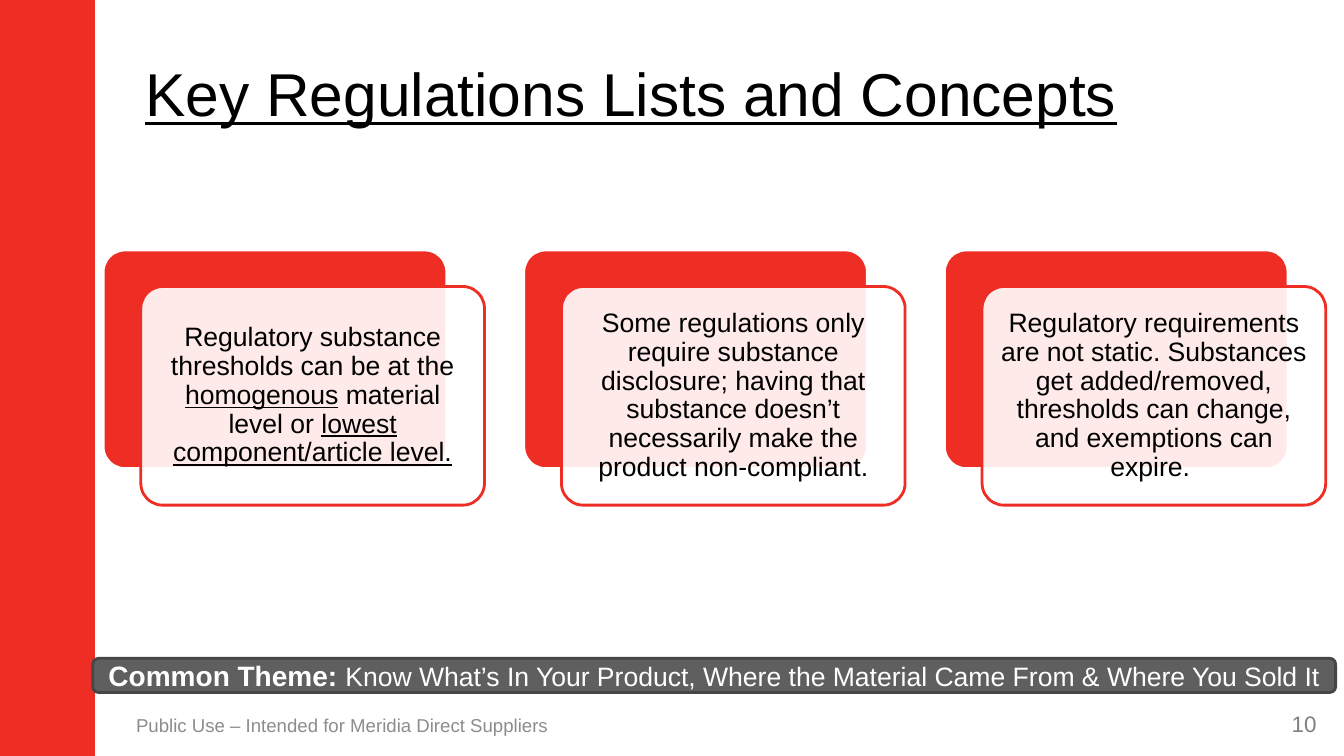
from lxml.etree import SubElement
from pptx import Presentation
from pptx.dml.color import RGBColor
from pptx.enum.shapes import MSO_SHAPE as Preset
from pptx.enum.text import MSO_ANCHOR as Anchor, MSO_AUTO_SIZE as AutoSize, PP_ALIGN as Align
from pptx.oxml.ns import qn
from pptx.util import Cm, Pt

RED, WHITE, BLACK = "EE2E24", "FFFFFF", "000000"

CARDS = [
    [("Regulatory substance thresholds can be at the ", {}),
     ("homogenous", {"underline": True}),
     (" material level or ", {}),
     ("lowest component/article level.", {"underline": True})],
    [("Some regulations only require substance disclosure; having that substance "
      "doesn’t necessarily make the product non-compliant.", {})],
    [("Regulatory requirements are not static. Substances get added/removed, "
      "thresholds can change, and exemptions can expire. ", {})],
]


def color(hex_text):
    return RGBColor.from_string(hex_text)


def write(shape, spans, size, ink=BLACK, align=Align.LEFT, anchor=Anchor.MIDDLE,
          spacing=1.0, margins=(0.25, 0.13, 0.25, 0.13)):
    """Fill a shape with one paragraph; spans are (text, format) pairs, margins in cm."""
    frame = shape.text_frame
    frame.word_wrap = True
    frame.auto_size = AutoSize.NONE
    frame.vertical_anchor = anchor
    (frame.margin_left, frame.margin_top,
     frame.margin_right, frame.margin_bottom) = map(Cm, margins)
    para = frame.paragraphs[0]
    para.alignment = align
    para.line_spacing = spacing
    for text, style in spans:
        span = para.add_run()
        span.text = text
        font = span.font
        font.name = "Arial"
        font.size = Pt(style.get("size", size))
        font.bold = style.get("bold", False)
        font.underline = style.get("underline", False)
        font.color.rgb = color(ink)


def add_panel(slide, preset, box, fill, line=None, radius=None, opacity=None):
    """Draw a flat preset shape in a (left, top, width, height) box in cm."""
    panel = slide.shapes.add_shape(preset, *map(Cm, box))
    panel.shadow.inherit = False
    panel.fill.solid()
    panel.fill.fore_color.rgb = color(fill)
    if radius is not None:
        panel.adjustments[0] = radius
    if opacity is not None:
        solid = panel.fill._xPr.find(qn("a:solidFill"))
        SubElement(solid[0], qn("a:alpha"), val=str(opacity * 1000))
    if line:
        panel.line.color.rgb = color(line)
        panel.line.width = Pt(2)
    else:
        panel.line.fill.background()
    return panel


def add_title(slide, box, text):
    title = slide.shapes.title
    title.left, title.top, title.width, title.height = map(Cm, box)
    write(title, [(text, {"underline": True})], 43.2, anchor=Anchor.TOP,
          spacing=0.95, margins=(0, 0, 0, 0))


def add_card(slide, box, spans):
    """Place a red back plate and, shifted down and right, a white text plate."""
    left, top, width, height = box
    shift_x, shift_y = 0.95, 0.92
    size = width - shift_x, height - shift_y
    add_panel(slide, Preset.ROUNDED_RECTANGLE, (left, top, *size), RED,
              line=WHITE, radius=0.1)
    front = add_panel(slide, Preset.ROUNDED_RECTANGLE,
                      (left + shift_x, top + shift_y, *size), WHITE,
                      line=RED, radius=0.1, opacity=90)
    write(front, spans, 19, align=Align.CENTER, spacing=0.9,
          margins=(0.2, 0.2, 0.2, 0.2))


def add_cards(slide, box):
    left, top, width, height = box
    card_width = 9.61
    step = (width - card_width) / (len(CARDS) - 1)
    for index, spans in enumerate(CARDS):
        add_card(slide, (left + index * step, top, card_width, height), spans)


def add_theme_bar(slide, box):
    bar = add_panel(slide, Preset.ROUNDED_RECTANGLE, box, "5F5F5F", line="464646")
    write(bar, [("Common Theme: ", {"size": 20, "bold": True}),
                ("Know What’s In Your Product, Where the Material Came From "
                 "& Where You Sold It", {})],
          19, ink=WHITE, align=Align.CENTER)


def add_footer(slide, box):
    left, top, width, height = box
    number_width = 2.06
    note = slide.shapes.add_textbox(Cm(left), Cm(top), Cm(11.43), Cm(height))
    write(note, [("Public Use – Intended for Meridia Direct Suppliers", {})], 13.3,
          ink="8C8C8C", anchor=Anchor.BOTTOM, margins=(0, 0.13, 0.25, 0.13))
    number = slide.shapes.add_textbox(Cm(left + width - number_width), Cm(top),
                                      Cm(number_width), Cm(height))
    write(number, [("10", {})], 16, ink="808080", align=Align.RIGHT,
          anchor=Anchor.BOTTOM)


def main():
    deck = Presentation()
    deck.slide_width, deck.slide_height = Cm(33.87), Cm(19.05)
    slide = deck.slides.add_slide(deck.slide_layouts[5])
    add_panel(slide, Preset.RECTANGLE, (0, 0, 2.39, 19.05), RED)
    add_title(slide, (3.66, 1.55, 29.41, 2.31), "Key Regulations Lists and Concepts")
    add_footer(slide, (3.43, 17.67, 30, 1.02))
    add_cards(slide, (2.6, 6.3, 30.81, 6.43))
    add_theme_bar(slide, (2.34, 16.59, 31.32, 0.86))
    deck.save("out.pptx")


if __name__ == "__main__":
    main()
